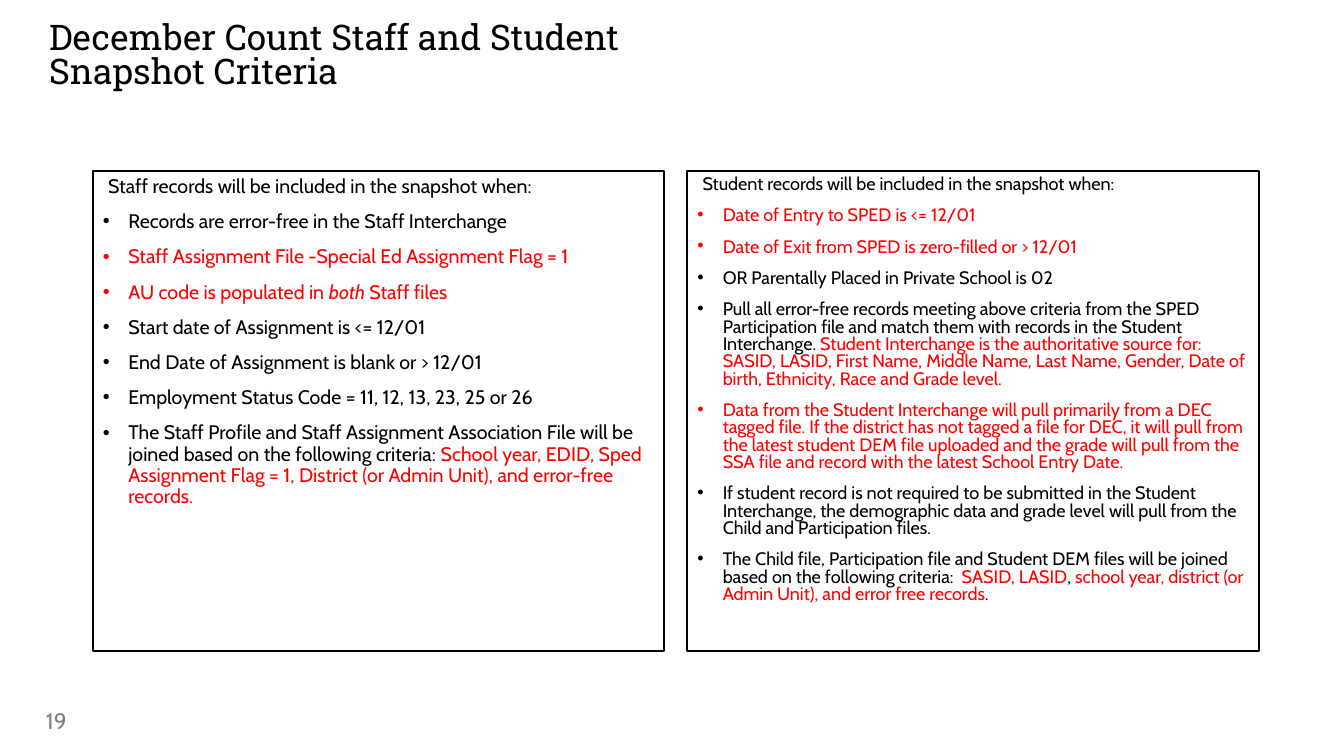
from dataclasses import dataclass

from lxml import etree
from pptx import Presentation
from pptx import util as u
from pptx.dml.color import RGBColor
from pptx.enum import text as t
from pptx.oxml import ns

BLACK = RGBColor(0, 0, 0)
RED = RGBColor(255, 0, 0)
GRAY = RGBColor(128, 128, 128)
SANS = "Cabin"
SLAB = "Roboto Slab"


@dataclass(frozen=True)
class Part:
    text: str
    hue: RGBColor = BLACK
    slant: bool = False


@dataclass(frozen=True)
class Panel:
    slot: int
    left: float
    size: float
    lead: float
    head: str
    items: list[list[Part]]


PANELS = [
    Panel(1, 2.34, 14, 0.9, "Staff records will be included in the snapshot when:", [
        [Part("Records are error-free in the Staff Interchange")],
        [Part("Staff Assignment File -Special Ed Assignment Flag = 1", RED)],
        [Part("AU code is populated in ", RED), Part("both", RED, True),
         Part(" Staff files", RED)],
        [Part("Start date of Assignment is <= 12/01")],
        [Part("End Date of Assignment is blank or > 12/01")],
        [Part("Employment Status Code = 11, 12, 13, 23, 25 or 26")],
        [Part("The Staff Profile and Staff Assignment Association File will be "
              "joined based on the following criteria: "),
         Part("School year, EDID, Sped Assignment Flag = 1, District "
              "(or Admin Unit), and error-free records.", RED)],
    ]),
    Panel(2, 17.32, 12.9, 0.8, "Student records will be included in the snapshot when:", [
        [Part("Date of Entry to SPED is <= 12/01", RED)],
        [Part("Date of Exit from SPED is zero-filled or > 12/01", RED)],
        [Part("OR Parentally Placed in Private School is 02")],
        [Part("Pull all error-free records meeting above criteria from the SPED "
              "Participation file and match them with records in the Student "
              "Interchange. "),
         Part("Student Interchange is the authoritative source for: SASID, LASID, "
              "First Name, Middle Name, Last Name, Gender, Date of birth, "
              "Ethnicity, Race and Grade level.", RED)],
        [Part("Data from the Student Interchange will pull primarily from a DEC "
              "tagged file. If the district has not tagged a file for DEC, it will "
              "pull from the latest student DEM file uploaded and the grade will "
              "pull from the SSA file and record with the latest School Entry "
              "Date.", RED)],
        [Part("If student record is not required to be submitted in the Student "
              "Interchange, the demographic data and grade level will pull from "
              "the Child and Participation files.")],
        [Part("The Child file, Participation file and Student DEM files will be "
              "joined based on the following criteria:  "),
         Part("SASID, LASID", RED), Part(", "),
         Part("school year, district (or Admin Unit), and error free records", RED),
         Part(".")],
    ]),
]


def place(box, left: float, top: float, width: float, height: float) -> None:
    box.left, box.top = u.Cm(left), u.Cm(top)
    box.width, box.height = u.Cm(width), u.Cm(height)


def write(para, text: str, *, size: float, face: str = SANS,
          hue: RGBColor = BLACK, slant: bool = False) -> None:
    run = para.add_run()
    run.text = text
    font = run.font
    font.size, font.name, font.italic = u.Pt(size), face, slant
    font.color.rgb = hue


def layout(para, lead: float, gap: float, bullet: bool) -> None:
    props = para._p.get_or_add_pPr()
    props.set("marL", str(u.Cm(0.64 if bullet else 0.13)))
    props.set("indent", str(u.Cm(-0.64 if bullet else 0)))
    if bullet:
        etree.SubElement(props, ns.qn("a:buFont")).set("typeface", "Arial")
        etree.SubElement(props, ns.qn("a:buChar")).set("char", "•")
    else:
        etree.SubElement(props, ns.qn("a:buNone"))
    para.line_spacing = lead
    para.space_before = u.Pt(gap)


def draw_panel(slide, panel: Panel) -> None:
    box = slide.placeholders[panel.slot]
    place(box, panel.left, 4.32, 14.4, 12.09)
    box.line.color.rgb = BLACK
    box.line.width = u.Pt(1.5)
    frame = box.text_frame
    frame.word_wrap = True
    frame.auto_size = t.MSO_AUTO_SIZE.NONE
    frame.vertical_anchor = t.MSO_ANCHOR.TOP
    head = frame.paragraphs[0]
    layout(head, panel.lead, 0, False)
    write(head, panel.head, size=panel.size)
    for item in panel.items:
        para = frame.add_paragraph()
        layout(para, panel.lead, 10, True)
        for part in item:
            write(para, part.text, size=panel.size, hue=part.hue, slant=part.slant)


def draw_title(slide) -> None:
    title = slide.shapes.title
    place(title, 1.24, 0.56, 22.4, 2.49)
    frame = title.text_frame
    frame.margin_left = frame.margin_right = 0
    frame.margin_top = frame.margin_bottom = 0
    frame.word_wrap = True
    frame.auto_size = t.MSO_AUTO_SIZE.NONE
    frame.vertical_anchor = t.MSO_ANCHOR.TOP
    para = frame.paragraphs[0]
    para.alignment = t.PP_ALIGN.LEFT
    para.line_spacing = 0.82
    write(para, "December Count Staff and Student ", size=25.2, face=SLAB)
    para.add_line_break()
    write(para, "Snapshot Criteria", size=25.2, face=SLAB)


def draw_number(slide) -> None:
    box = slide.shapes.add_textbox(u.Cm(0.91), u.Cm(17.65), u.Cm(7.62), u.Cm(1.02))
    frame = box.text_frame
    frame.word_wrap = True
    frame.vertical_anchor = t.MSO_ANCHOR.MIDDLE
    write(frame.paragraphs[0], "19", size=16, hue=GRAY)


def main() -> None:
    deck = Presentation()
    deck.slide_width, deck.slide_height = u.Cm(33.87), u.Cm(19.05)
    slide = deck.slides.add_slide(deck.slide_layouts.get_by_name("Two Content"))
    draw_title(slide)
    for panel in PANELS:
        draw_panel(slide, panel)
    draw_number(slide)
    deck.save("out.pptx")


if __name__ == "__main__":
    main()
